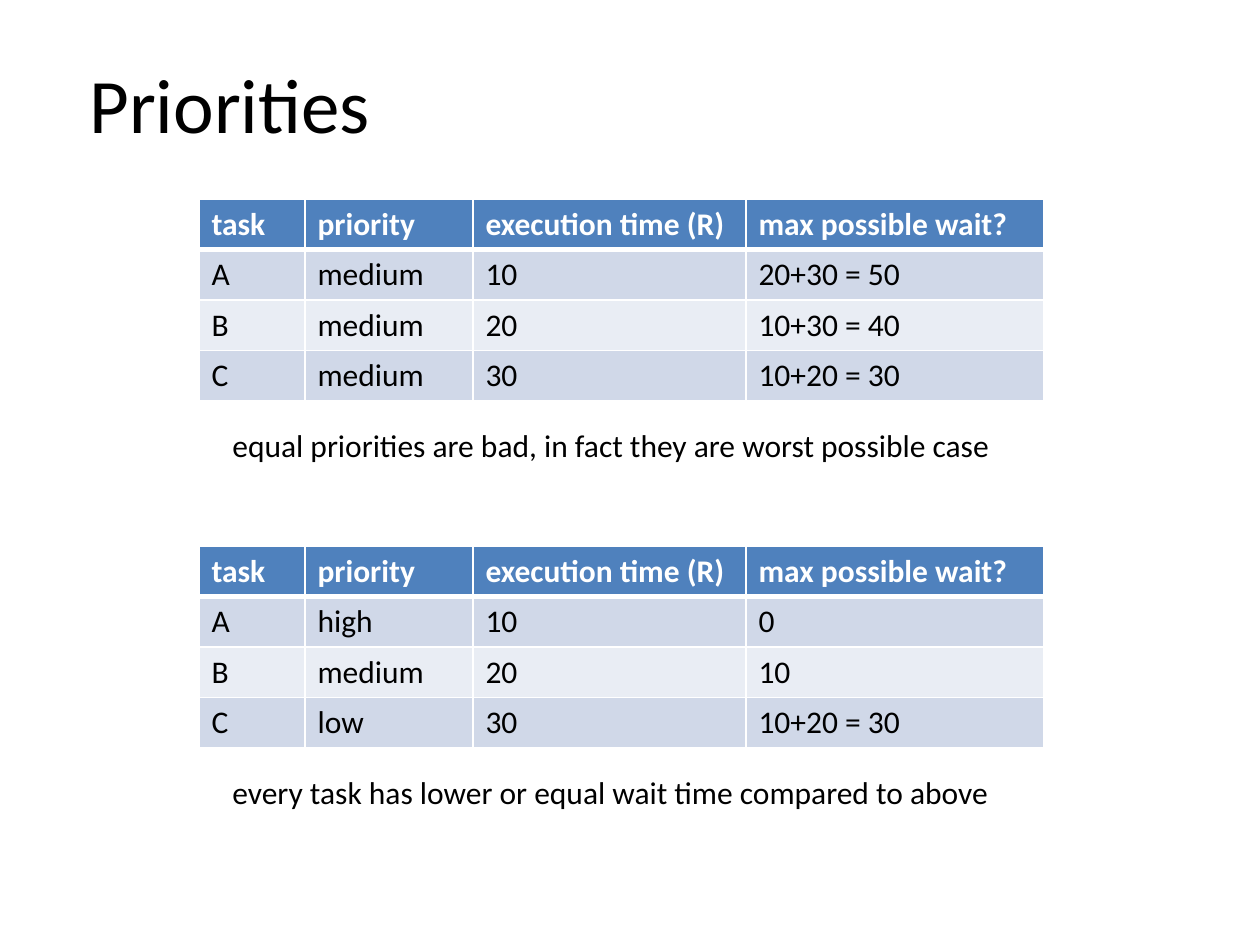
import pptx
import pptx.dml.color
import pptx.enum.text
import pptx.oxml
import pptx.oxml.ns
import pptx.util

# Content
TITLE = "Priorities"
HEADER = ("task", "priority", "execution time (R)", "max possible wait?")
SECTIONS = [
    {
        "rows": [
            ("A", "medium", "10", "20+30 = 50"),
            ("B", "medium", "20", "10+30 = 40"),
            ("C", "medium", "30", "10+20 = 30"),
        ],
        "note": "equal priorities are bad, in fact they are worst possible case",
        "note_width": 798,
    },
    {
        "rows": [
            ("A", "high", "10", "0"),
            ("B", "medium", "20", "10"),
            ("C", "low", "30", "10+20 = 30"),
        ],
        "note": "every task has lower or equal wait time compared to above",
        "note_width": 790,
    },
]

# Format and layout, lengths in px
COLORS = {"text": "000000", "head": "4F81BD", "head_text": "FFFFFF",
          "odd": "D0D8E8", "even": "E9EDF4", "border": "FFFFFF"}
FONT = "Calibri"
COLUMNS = (106, 168, 273, 298)
ROW_HEIGHT = 50
TABLE_LEFT, TABLE_TOP = 199, 199
SECTION_STEP = 347
NOTE_LEFT, NOTE_OFFSET, NOTE_HEIGHT = 220, 221, 50


def px(n):
    return pptx.util.Emu(round(n * 914400 / 126))


def rgb(name):
    return pptx.dml.color.RGBColor.from_string(COLORS[name])


def write(tf, text, size=18, color="text", bold=False):
    r = tf.paragraphs[0].add_run()
    r.text = text
    r.font.name = FONT
    r.font.size = pptx.util.Pt(size)
    r.font.bold = bold
    r.font.color.rgb = rgb(color)


def add_label(s, text, left, top, width, height, **fmt):
    tf = s.shapes.add_textbox(px(left), px(top), px(width), px(height)).text_frame
    tf.word_wrap = False
    tf.auto_size = pptx.enum.text.MSO_AUTO_SIZE.SHAPE_TO_FIT_TEXT
    write(tf, text, **fmt)


def set_borders(cell, **widths):
    tc_pr = cell._tc.get_or_add_tcPr()
    for side in "LRTB":
        width = pptx.util.Pt(widths.get(side, 1))
        tc_pr.append(pptx.oxml.parse_xml(
            f'<a:ln{side} {pptx.oxml.ns.nsdecls("a")} w="{width}"><a:solidFill>'
            f'<a:srgbClr val="{COLORS["border"]}"/></a:solidFill></a:ln{side}>'))


def add_task_table(s, rows, top):
    rows = [HEADER, *rows]
    table = s.shapes.add_table(len(rows), len(COLUMNS), px(TABLE_LEFT), px(top),
                               px(sum(COLUMNS)), px(ROW_HEIGHT * len(rows))).table
    for column, width in zip(table.columns, COLUMNS):
        column.width = px(width)
    for i, row in enumerate(rows):
        table.rows[i].height = px(ROW_HEIGHT)
        head = i == 0
        fill = "head" if head else "odd" if i % 2 else "even"
        for j, text in enumerate(row):
            cell = table.cell(i, j)
            # Thick rule between the header and the body
            set_borders(cell, T=3 if i == 1 else 1, B=3 if head else 1)
            cell.fill.solid()
            cell.fill.fore_color.rgb = rgb(fill)
            write(cell.text_frame, text, bold=head,
                  color="head_text" if head else "text")


prs = pptx.Presentation()
prs.slide_width, prs.slide_height = px(1260), px(945)
s = prs.slides.add_slide(prs.slide_layouts[6])

# Title
add_label(s, TITLE, 77, 50, 310, 106, size=44)

# Tables, each with a note below
for i, section in enumerate(SECTIONS):
    top = TABLE_TOP + i * SECTION_STEP
    add_task_table(s, section["rows"], top)
    add_label(s, section["note"], NOTE_LEFT, top + NOTE_OFFSET,
              section["note_width"], NOTE_HEIGHT)

prs.save("out.pptx")
